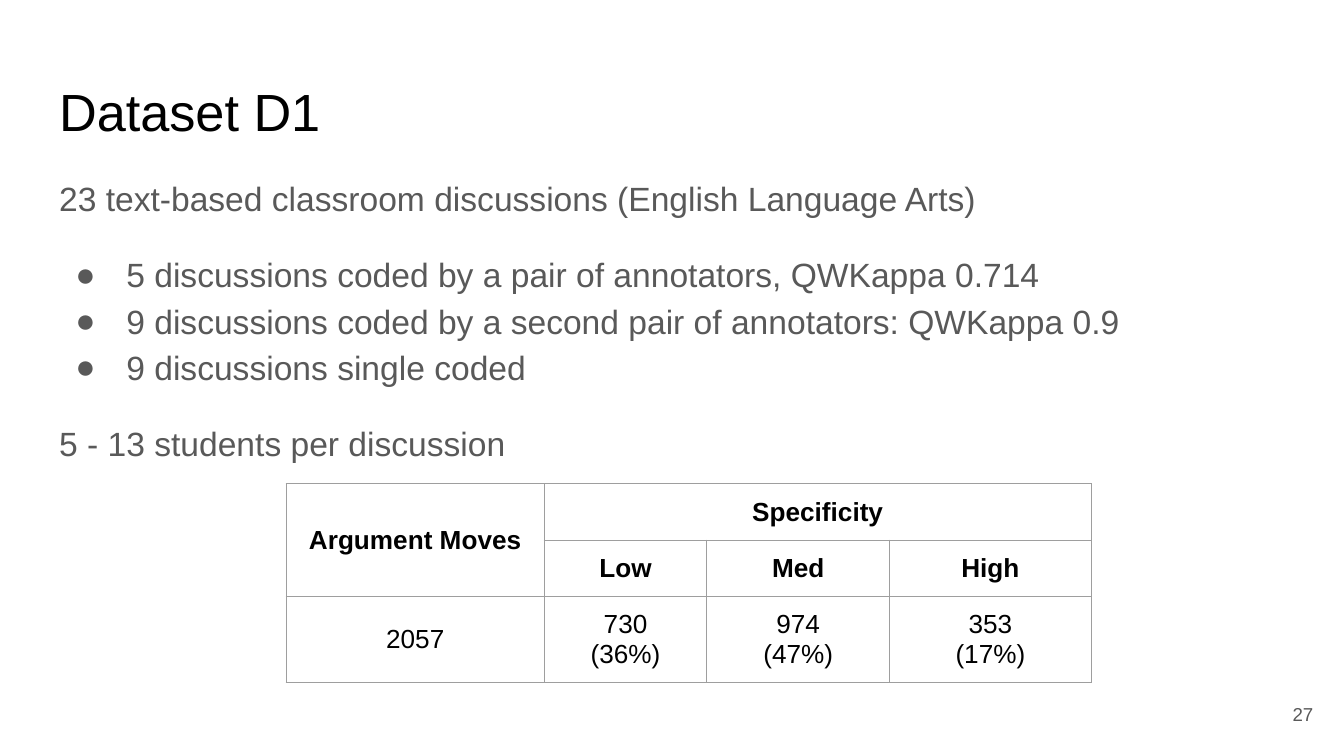
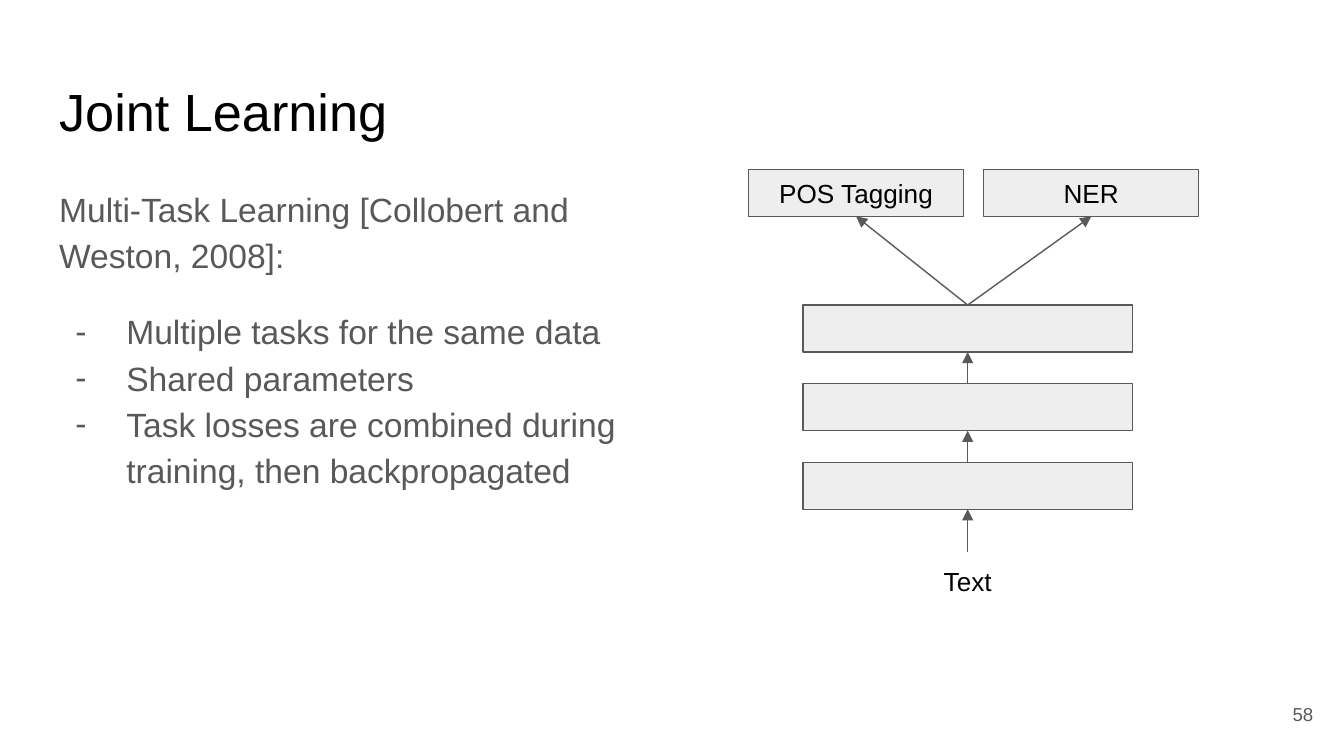
from pptx import Presentation
from pptx.dml.color import RGBColor
from pptx.enum.shapes import MSO_CONNECTOR, MSO_SHAPE
from pptx.enum.text import MSO_ANCHOR, MSO_AUTO_SIZE, PP_ALIGN
from pptx.oxml.ns import qn
from pptx.util import Inches, Pt
from lxml import etree

LEFT, MID, RIGHT = PP_ALIGN.LEFT, PP_ALIGN.CENTER, PP_ALIGN.RIGHT
TOP, HALF = MSO_ANCHOR.TOP, MSO_ANCHOR.MIDDLE
RECT, LINE, FIXED = MSO_SHAPE.RECTANGLE, MSO_CONNECTOR.STRAIGHT, MSO_AUTO_SIZE.NONE

FONT = "Arial"
BLACK, GREY, PALE, RULE, WHITE = "000000", "595959", "EEEEEE", "9E9E9E", "FFFFFF"
WIDE, HIGH = 10, 10 * 9 / 16
EDGE, PAD, THIN = 0.34, 0.1, 0.75

DATA = {
    "title": "Dataset D1",
    "page": "27",
    "mark": "●",
    "body": [
        (0, "23 text-based classroom discussions (English Language Arts)"),
        (1, "5 discussions coded by a pair of annotators, QWKappa 0.714"),
        (1, "9 discussions coded by a second pair of annotators: QWKappa 0.9"),
        (1, "9 discussions single coded"),
        (0, "5 - 13 students per discussion"),
    ],
    "box": (EDGE, 1.18, WIDE - 2 * EDGE, 3.86),
}
JOINT = {
    "title": "Joint Learning",
    "page": "58",
    "mark": "-",
    "body": [
        (0, "Multi-Task Learning [Collobert and Weston, 2008]:"),
        (1, "Multiple tasks for the same data"),
        (1, "Shared parameters"),
        (1, "Task losses are combined during training, then backpropagated"),
    ],
    "box": (EDGE, 1.26, 4.48, 3.74),
}
COUNTS = [
    ["Argument Moves", "Specificity", "", ""],
    ["", "Low", "Med", "High"],
    ["2057", "730\n(36%)", "974\n(47%)", "353\n(17%)"],
]
COLS, ROWS = (1.92, 1.21, 1.36, 1.5), (0.42, 0.42, 0.63)
TASKS = ["POS Tagging", "NER"]
LAYERS = 3


def tint(code):
    return RGBColor.from_string(code)


def inch(*nums):
    return [Inches(n) for n in nums]


def place(shape, box):
    shape.left, shape.top, shape.width, shape.height = inch(*box)


def style(frame, size, color, align=MID, anchor=HALF, bold=False):
    frame.word_wrap = True
    frame.auto_size = FIXED
    frame.vertical_anchor = anchor
    frame.margin_left = frame.margin_right = Inches(PAD)
    frame.margin_top = frame.margin_bottom = Inches(PAD)
    for para in frame.paragraphs:
        para.alignment = align
        paint(para, size, color, bold)


def paint(para, size, color, bold=False):
    for run in para.runs:
        run.font.name, run.font.size, run.font.bold = FONT, Pt(size), bold
        run.font.color.rgb = tint(color)


def bullet(para, mark):
    props = para._p.get_or_add_pPr()
    props.set("marL", str(Inches(0.5 if mark else 0)))
    props.set("indent", str(Inches(-0.38 if mark else 0)))
    if mark:
        clr = etree.SubElement(props, qn("a:buClr"))
        etree.SubElement(clr, qn("a:srgbClr"), val=GREY)
        etree.SubElement(props, qn("a:buFont"), typeface=FONT)
        etree.SubElement(props, qn("a:buChar"), char=mark)
    else:
        etree.SubElement(props, qn("a:buNone"))


def label(slide, text, box, size, color, align, anchor):
    shape = slide.shapes.add_textbox(*inch(*box))
    shape.text_frame.text = text
    style(shape.text_frame, size, color, align, anchor)
    return shape


def page(deck, info):
    slide = deck.slides.add_slide(deck.slide_layouts[1])
    slide.background.fill.solid()
    slide.background.fill.fore_color.rgb = tint(WHITE)
    title, body = slide.placeholders
    place(title, (EDGE, 0.49, WIDE - 2 * EDGE, 0.63))
    title.text_frame.text = info["title"]
    style(title.text_frame, 28, BLACK, LEFT, TOP)
    place(body, info["box"])
    frame = body.text_frame
    frame.text = "\n".join(text for _, text in info["body"])
    style(frame, 18, GREY, LEFT, TOP)
    last = 0
    for para, (level, _) in zip(frame.paragraphs, info["body"]):
        bullet(para, info["mark"] if level else "")
        para.line_spacing = 1.15
        para.space_before = Pt(16 if level != last else 0)
        last = level
    label(slide, info["page"], (9.27, 5.1, 0.6, 0.43), 10, GREY, RIGHT, HALF)
    return slide


def border(cell):
    props = cell._tc.get_or_add_tcPr()
    for side in ("lnL", "lnR", "lnT", "lnB"):
        line = etree.SubElement(props, qn("a:" + side), w=str(Pt(THIN)))
        fill = etree.SubElement(line, qn("a:solidFill"))
        etree.SubElement(fill, qn("a:srgbClr"), val=RULE)


def grid(slide):
    box = inch(2.13, 3.6, sum(COLS), sum(ROWS))
    table = slide.shapes.add_table(len(ROWS), len(COLS), *box).table
    table.first_row = table.horz_banding = False
    for col, wide in zip(table.columns, COLS):
        col.width = Inches(wide)
    for row, high in zip(table.rows, ROWS):
        row.height = Inches(high)
    for r, texts in enumerate(COUNTS):
        for c, text in enumerate(texts):
            cell = table.cell(r, c)
            border(cell)
            cell.fill.background()
            cell.vertical_anchor = HALF
            cell.margin_left = cell.margin_right = Inches(PAD)
            cell.margin_top = cell.margin_bottom = Inches(PAD)
            cell.text_frame.text = text
            for para in cell.text_frame.paragraphs:
                para.alignment = MID
                paint(para, 14, BLACK, r < 2)
    table.cell(0, 0).merge(table.cell(1, 0))
    table.cell(0, 1).merge(table.cell(0, 3))


def block(slide, box, text=""):
    shape = slide.shapes.add_shape(RECT, *inch(*box))
    shape.shadow.inherit = False
    shape.fill.solid()
    shape.fill.fore_color.rgb = tint(PALE)
    shape.line.color.rgb = tint(GREY)
    shape.line.width = Pt(THIN)
    shape.text_frame.text = text
    style(shape.text_frame, 14, BLACK)
    return shape


def arrow(slide, low, high):
    line = slide.shapes.add_connector(LINE, 0, 0, 0, 0)
    line.begin_connect(low, 0)
    line.end_connect(high, 2)
    line.line.color.rgb = tint(GREY)
    line.line.width = Pt(THIN)
    props = line._element.spPr
    etree.SubElement(props.find(qn("a:ln")), qn("a:tailEnd"), type="triangle")
    etree.SubElement(props, qn("a:effectLst"))


def net(slide):
    mid, tall, wide, step = 7.2, 0.35, 2.45, 0.585
    stack = [
        block(slide, (mid - wide / 2, 3.44 - i * step, wide, tall))
        for i in range(LAYERS)
    ]
    tasks = [
        block(slide, (5.57 + i * 1.75, 1.26, 1.6, tall), text)
        for i, text in enumerate(TASKS)
    ]
    text = label(slide, "Text", (mid - 0.41, 4.11, 0.82, tall), 14, BLACK, MID, TOP)
    for low, high in zip([text] + stack, stack):
        arrow(slide, low, high)
    for task in tasks:
        arrow(slide, stack[-1], task)


def main():
    deck = Presentation()
    deck.slide_width, deck.slide_height = inch(WIDE, HIGH)
    grid(page(deck, DATA))
    net(page(deck, JOINT))
    deck.save("out.pptx")


if __name__ == "__main__":
    main()
